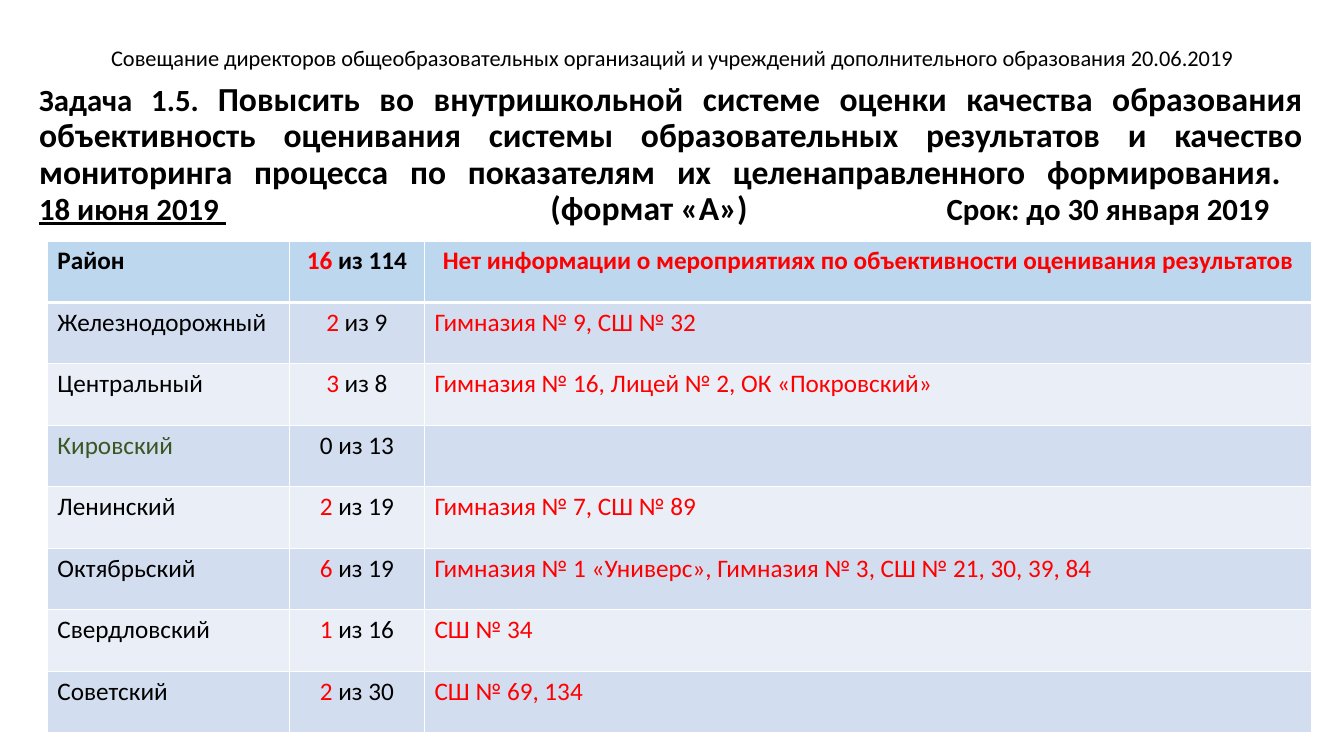
"""Builds the slide on task 1.5: schools by district without assessment information."""
from lxml.etree import SubElement
from pptx import Presentation
from pptx.dml.color import RGBColor
from pptx.enum.text import MSO_ANCHOR, PP_ALIGN
from pptx.oxml.ns import qn
from pptx.util import Inches, Pt

FONT = "Calibri"
BLACK = RGBColor(0x00, 0x00, 0x00)
RED = RGBColor(0xFF, 0x00, 0x00)
GREEN = RGBColor(0x38, 0x57, 0x23)
HEADER_FILL = RGBColor(0xBD, 0xD7, 0xEE)
BAND_FILLS = (RGBColor(0xEA, 0xEF, 0xF7), RGBColor(0xD2, 0xDE, 0xEF))
BORDER = "FFFFFF"

MEETING = ("Совещание директоров общеобразовательных организаций "
           "и учреждений дополнительного образования 20.06.2019")
TASK = (
    ("Задача 1.5. ", 22),
    ("Повысить во внутришкольной системе оценки качества образования "
     "объективность оценивания системы образовательных результатов и качество "
     "мониторинга процесса по показателям их целенаправленного формирования. ", 24),
)
DATE = "18 июня 2019 "
DETAILS = (("\t(формат «А»)\t", 24), ("Срок: до 30 января 2019", 22))
TAB_STOPS = (5.07, 9.0)

COLUMN_WIDTHS = (2.4, 1.34, 8.8)
ROW_HEIGHT = 0.61
ROWS = (
    ("Район", "16", " из 114",
     "Нет информации о мероприятиях по объективности оценивания результатов"),
    ("Железнодорожный", "2", " из 9", "Гимназия № 9, СШ № 32"),
    ("Центральный", "3", " из 8", "Гимназия № 16, Лицей № 2, ОК «Покровский»"),
    ("Кировский", "0", " из 13", ""),
    ("Ленинский", "2", " из 19", "Гимназия № 7, СШ № 89"),
    ("Октябрьский", "6", " из 19",
     "Гимназия № 1 «Универс», Гимназия № 3, СШ № 21, 30, 39, 84"),
    ("Свердловский", "1", " из 16", "СШ № 34"),
    ("Советский", "2", " из 30", "СШ № 69, 134"),
)


def add_text_box(page, left, top, width, height, anchor):
    frame = page.shapes.add_textbox(
        Inches(left), Inches(top), Inches(width), Inches(height)).text_frame
    frame.word_wrap = True
    frame.vertical_anchor = anchor
    para = frame.paragraphs[0]
    para.line_spacing = 0.9
    return para


def set_font(para, bold):
    para.font.name = FONT
    para.font.bold = bold
    para.font.color.rgb = BLACK


def add_span(para, text, size, color=None):
    span = para.add_run()
    span.text = text
    span.font.size = Pt(size)
    if color is not None:
        span.font.color.rgb = color
    return span


def add_tab_stops(para, stops):
    tabs = SubElement(para._p.get_or_add_pPr(), qn("a:tabLst"))
    for stop in stops:
        SubElement(tabs, qn("a:tab"), pos=str(Inches(stop)), algn="l")


def add_borders(cell, row):
    properties = cell._tc.get_or_add_tcPr()
    widths = {"L": 1, "R": 1, "T": 3 if row == 1 else 1, "B": 3 if row == 0 else 1}
    for side, width in widths.items():
        line = SubElement(properties, qn(f"a:ln{side}"), w=str(Pt(width)))
        fill = SubElement(line, qn("a:solidFill"))
        SubElement(fill, qn("a:srgbClr"), val=BORDER)


def add_heading(page):
    para = add_text_box(page, 0.92, 0.4, 11.5, 0.37, MSO_ANCHOR.MIDDLE)
    para.alignment = PP_ALIGN.CENTER
    set_font(para, False)
    add_span(para, MEETING, 16)


def add_task(page):
    para = add_text_box(page, 0.29, 0.77, 12.73, 1.6, MSO_ANCHOR.TOP)
    para.alignment = PP_ALIGN.JUSTIFY
    add_tab_stops(para, TAB_STOPS)
    set_font(para, True)
    for text, size in TASK:
        add_span(para, text, size)
    para.add_line_break()
    add_span(para, DATE, 22).font.underline = True
    for text, size in DETAILS:
        add_span(para, text, size)


def add_district_table(page):
    table = page.shapes.add_table(
        len(ROWS), len(COLUMN_WIDTHS), Inches(0.47), Inches(2.39),
        Inches(sum(COLUMN_WIDTHS)), Inches(ROW_HEIGHT * len(ROWS))).table
    for column, width in zip(table.columns, COLUMN_WIDTHS):
        column.width = Inches(width)
    for row, (district, missing, total, schools) in enumerate(ROWS):
        table.rows[row].height = Inches(ROW_HEIGHT)
        is_clear = missing == "0"
        cells = (
            ((district, GREEN if is_clear else BLACK),),
            ((missing, BLACK if is_clear else RED), (total, BLACK)),
            ((schools, RED),),
        )
        for column, spans in enumerate(cells):
            cell = table.cell(row, column)
            add_borders(cell, row)
            cell.fill.solid()
            cell.fill.fore_color.rgb = BAND_FILLS[row % 2] if row else HEADER_FILL
            para = cell.text_frame.paragraphs[0]
            centred = column == 1 or (row == 0 and column == 2)
            para.alignment = PP_ALIGN.CENTER if centred else PP_ALIGN.LEFT
            set_font(para, row == 0)
            for text, color in spans:
                if text:
                    add_span(para, text, 18, color)


def main():
    deck = Presentation()
    deck.slide_width = Inches(13.33)
    deck.slide_height = Inches(7.5)
    page = deck.slides.add_slide(deck.slide_layouts[6])
    add_heading(page)
    add_task(page)
    add_district_table(page)
    deck.save("out.pptx")


if __name__ == "__main__":
    main()
